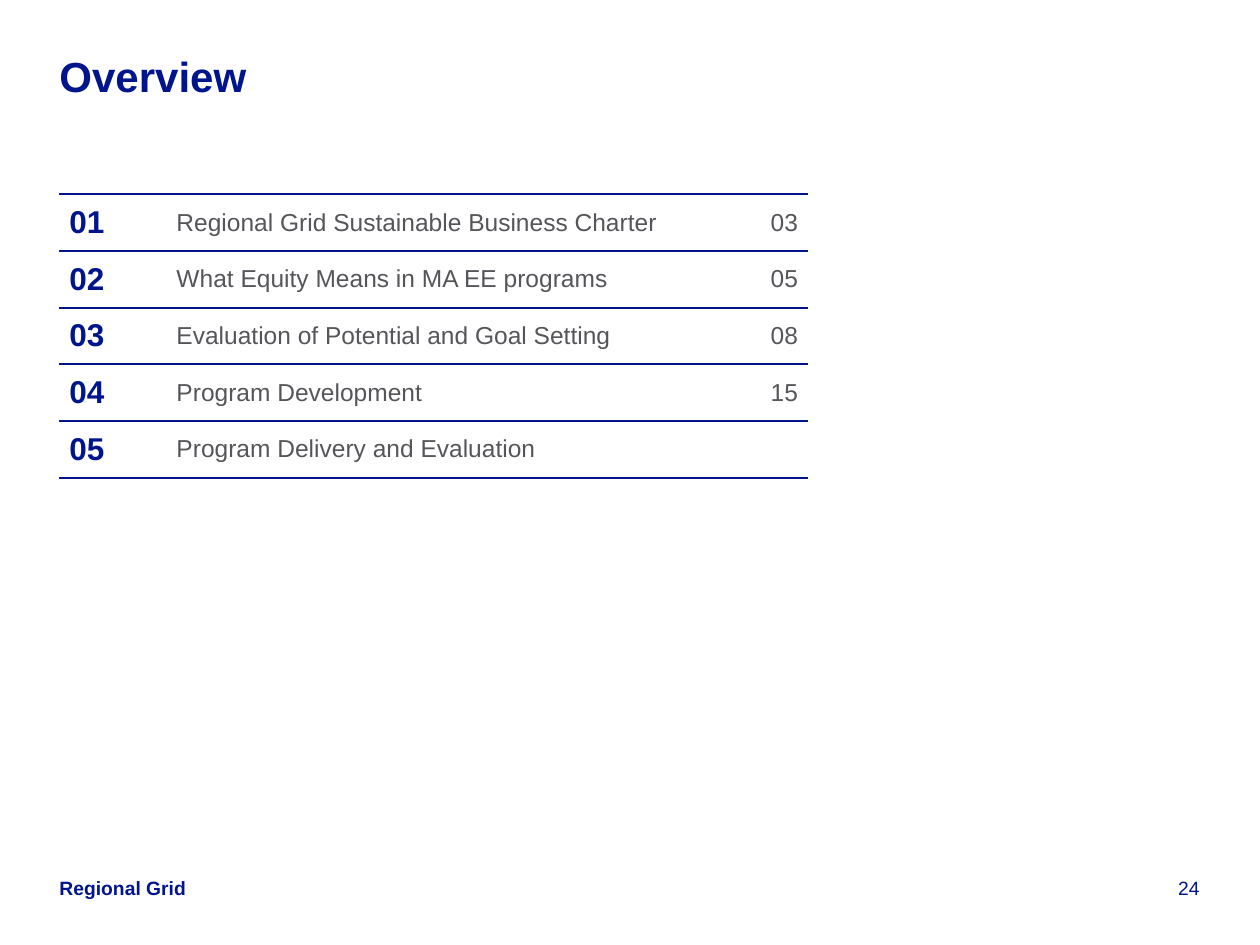
from lxml import etree
from pptx import Presentation
from pptx.dml.color import RGBColor
from pptx.enum.text import MSO_ANCHOR, PP_ALIGN
from pptx.oxml.ns import qn
from pptx.util import Pt

LEFT, RIGHT = PP_ALIGN.LEFT, PP_ALIGN.RIGHT
TOP, MIDDLE, BOTTOM = MSO_ANCHOR.TOP, MSO_ANCHOR.MIDDLE, MSO_ANCHOR.BOTTOM
TITLE_ONLY = 5

AGENDA = [
    ("01", "Regional Grid Sustainable Business Charter", "03"),
    ("02", "What Equity Means in MA EE programs", "05"),
    ("03", "Evaluation of Potential and Goal Setting", "08"),
    ("04", "Program Development", "15"),
    ("05", "Program Delivery and Evaluation", ""),
]


def color(value):
    return RGBColor.from_string(value)


class SlideBuilder:
    font = "Arial"
    blue = "00148C"
    grey = "55555A"
    rule_width = 1.5

    def __init__(self, page):
        self.page = page

    def style_text(self, frame, text, size, shade, bold=False, align=LEFT):
        frame.text = text
        para = frame.paragraphs[0]
        para.alignment = align
        for span in para.runs:
            span.font.name = self.font
            span.font.size = Pt(size)
            span.font.bold = bold
            span.font.color.rgb = color(shade)

    def frame(self, box, anchor):
        """Return the wrapped, margin-free text frame of a box."""
        frame = box.text_frame
        frame.word_wrap = True
        frame.vertical_anchor = anchor
        frame.margin_left = frame.margin_right = Pt(0)
        frame.margin_top = frame.margin_bottom = Pt(0)
        return frame

    def title(self, text, left, top, width, height):
        box = self.page.shapes.title
        box.left, box.top, box.width, box.height = map(Pt, (left, top, width, height))
        self.style_text(self.frame(box, TOP), text, 24, self.blue, bold=True)

    def footer(self, text, left, top, width, height, bold=False, align=LEFT):
        box = self.page.shapes.add_textbox(*map(Pt, (left, top, width, height)))
        self.style_text(self.frame(box, BOTTOM), text, 11, self.blue, bold, align)

    def rule_cell(self, cell):
        """Draw the top and bottom borders and hide the side ones."""
        properties = cell._tc.get_or_add_tcPr()
        for position, side in enumerate(("lnL", "lnR", "lnT", "lnB")):
            line = etree.Element(qn(f"a:{side}"), w=str(Pt(self.rule_width)))
            if side in ("lnT", "lnB"):
                fill = etree.SubElement(line, qn("a:solidFill"))
                etree.SubElement(fill, qn("a:srgbClr"), val=self.blue)
            else:
                etree.SubElement(line, qn("a:noFill"))
            properties.insert(position, line)

    def agenda(self, rows, left, top, widths, row_height):
        holder = self.page.shapes.add_table(
            len(rows), len(widths), Pt(left), Pt(top),
            Pt(sum(widths)), Pt(row_height * len(rows)))
        table = holder.table
        table.first_row = table.horz_banding = False
        for column, width in zip(table.columns, widths):
            column.width = Pt(width)
        styles = [(18, self.blue, True, LEFT),
                  (14, self.grey, False, LEFT),
                  (14, self.grey, False, RIGHT)]
        for row, texts in zip(table.rows, rows):
            row.height = Pt(row_height)
            for cell, text, style in zip(row.cells, texts, styles):
                cell.fill.background()
                cell.vertical_anchor = MIDDLE
                cell.margin_left = cell.margin_right = Pt(5.67)
                cell.margin_top = cell.margin_bottom = Pt(5.4)
                self.style_text(cell.text_frame, text, *style)
                self.rule_cell(cell)


def main():
    deck = Presentation()
    deck.slide_width, deck.slide_height = Pt(720), Pt(540)
    page = deck.slides.add_slide(deck.slide_layouts[TITLE_ONLY])
    builder = SlideBuilder(page)
    builder.footer("24", 643.7, 500.2, 41.8, 13.7, align=RIGHT)
    builder.footer("Regional Grid", 34, 500.2, 90, 13.7, bold=True)
    builder.title("Overview", 34, 29, 652, 29)
    builder.agenda(AGENDA, 34, 111, (61.2, 306.7, 59.8), 31.5)
    deck.save("out.pptx")


if __name__ == "__main__":
    main()
